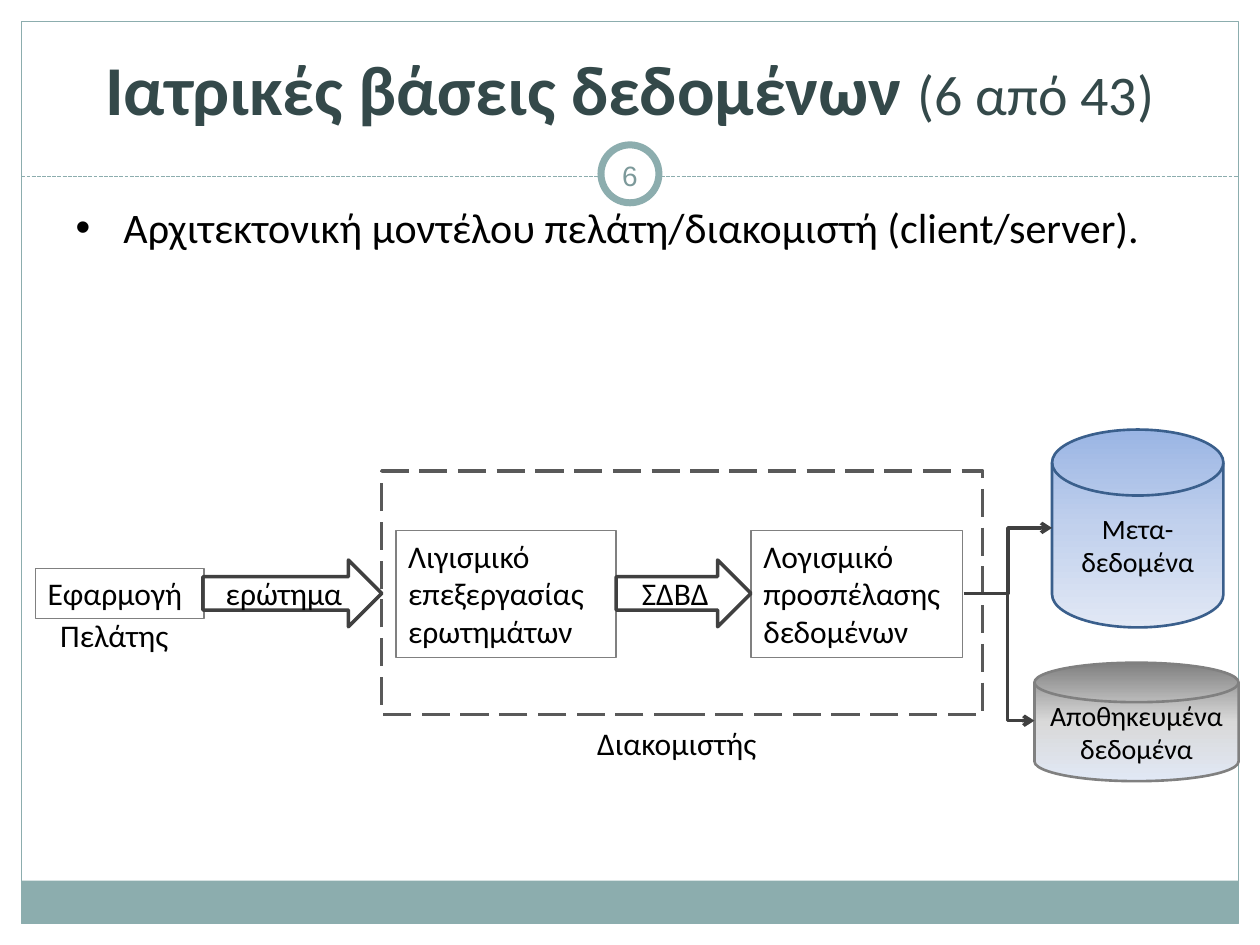
from copy import deepcopy

from lxml import etree
from pptx import Presentation
from pptx.dml.color import RGBColor
from pptx.enum.dml import MSO_LINE
from pptx.enum.shapes import MSO_CONNECTOR, MSO_SHAPE
from pptx.enum.text import MSO_ANCHOR, MSO_AUTO_SIZE, PP_ALIGN
from pptx.oxml.ns import qn
from pptx.util import Inches, Pt

RECT, OVAL = MSO_SHAPE.RECTANGLE, MSO_SHAPE.OVAL
ARROW, DISK = MSO_SHAPE.RIGHT_ARROW, MSO_SHAPE.FLOWCHART_MAGNETIC_DISK
STRAIGHT, ELBOW = MSO_CONNECTOR.STRAIGHT, MSO_CONNECTOR.ELBOW
SYS_DASH, LONG_DASH = MSO_LINE.SQUARE_DOT, MSO_LINE.LONG_DASH
LEFT, CENTER = PP_ALIGN.LEFT, PP_ALIGN.CENTER
TOP, MIDDLE = MSO_ANCHOR.TOP, MSO_ANCHOR.MIDDLE
NO_FIT, GROW = MSO_AUTO_SIZE.NONE, MSO_AUTO_SIZE.SHAPE_TO_FIT_TEXT
TEAL, INK, GREY, BLACK = "8CADAE", "404040", "808080", "000000"


def rgb(value):
    """Turn a hex string into a colour."""
    return RGBColor.from_string(value)


def inches(box):
    """Turn a sequence of numbers into lengths."""
    return [Inches(v) for v in box]


def add_run(p, text, size, color=BLACK, bold=False, font="Calibri"):
    """Append one formatted run to a paragraph."""
    r = p.add_run()
    r.text = text
    r.font.name, r.font.size, r.font.bold = font, Pt(size), bold
    r.font.color.rgb = rgb(color)


def set_line(line, color, width, dash=None):
    """Format an outline or a connector line."""
    line.color.rgb = rgb(color)
    line.width = Pt(width)
    if dash:
        line.dash_style = dash


def set_text(s, text, size=18, align=LEFT, anchor=TOP, wrap=True, fit=NO_FIT):
    """Write one paragraph into a shape."""
    tf = s.text_frame
    tf.word_wrap, tf.auto_size, tf.vertical_anchor = wrap, fit, anchor
    p = tf.paragraphs[0]
    p.alignment = align
    add_run(p, text, size)


def add_box(slide, kind, box, fill=None, line=None):
    """Add a preset shape with an optional fill and line."""
    s = slide.shapes.add_shape(kind, *inches(box))
    s.shadow.inherit = False
    if fill:
        s.fill.solid()
        s.fill.fore_color.rgb = rgb(fill)
    else:
        s.fill.background()
    if line:
        set_line(s.line, *line)
    else:
        s.line.fill.background()
    return s


def add_label(slide, box, text):
    """Add a free caption that does not wrap."""
    s = slide.shapes.add_textbox(*inches(box))
    set_text(s, text, wrap=False, fit=GROW)


def add_link(slide, kind, ends, line, bend=None, arrow=False):
    """Add a connector, with an optional bend position and arrowhead."""
    s = slide.shapes.add_connector(kind, *inches(ends))
    set_line(s.line, *line)
    etree.SubElement(s._element.spPr, qn("a:effectLst"))
    if arrow:
        etree.SubElement(s.line._get_or_add_ln(), qn("a:tailEnd"), type="arrow")
    if bend:
        guides = s._element.spPr.find(qn("a:prstGeom")).get_or_add_avLst()
        etree.SubElement(guides, qn("a:gd"), name="adj1", fmla=f"val {round(bend * 100000)}")


def add_disk(slide, box, text, colors, line_color):
    """Add a data store with a vertical three-stop gradient."""
    s = add_box(slide, DISK, box, line=(line_color, 1.5))
    s.fill.gradient()
    s.fill.gradient_angle = 270
    stops = s._element.spPr.find(qn("a:gradFill")).find(qn("a:gsLst"))
    stops.append(deepcopy(stops[-1]))
    for stop, position, color in zip(s.fill.gradient_stops, (0, 0.5, 1), colors):
        stop.position = position
        stop.color.rgb = rgb(color)
    set_text(s, text, 16, CENTER, MIDDLE)


def add_frame(slide, box, number):
    """Draw the page border, footer band, divider and page number."""
    left, top, width, height = box
    right, middle, divider = left + width, left + width / 2, 1.4
    add_box(slide, RECT, (left, 6.99, width, 0.34), TEAL)
    add_box(slide, RECT, box, line=(TEAL, 0.75))
    add_link(slide, STRAIGHT, (left, divider, right, divider), (TEAL, 0.75, SYS_DASH))
    add_box(slide, OVAL, (middle - 0.23, 1.15, 0.46, 0.46), "FFFFFF", (TEAL, 4))
    s = slide.shapes.add_textbox(*inches((middle - 0.25, 1.15, 0.5, 0.48)))
    tf = s.text_frame
    tf.word_wrap, tf.vertical_anchor = True, MIDDLE
    tf.margin_left = tf.margin_right = tf.margin_top = tf.margin_bottom = Inches(0.05)
    p = tf.paragraphs[0]
    p.alignment = CENTER
    add_run(p, number, 16, "7C999A", font="Arial")


def place(s, box):
    """Move a placeholder to a box and return its first paragraph."""
    s.left, s.top, s.width, s.height = inches(box)
    s.text_frame.word_wrap, s.text_frame.auto_size = True, NO_FIT
    return s.text_frame.paragraphs[0]


def fill_title(s, box):
    """Fill the title placeholder."""
    p = place(s, box)
    s.text_frame.vertical_anchor = MIDDLE
    p.alignment = CENTER
    add_run(p, "Ιατρικές βάσεις δεδομένων ", 40, "34494A", True)
    add_run(p, "(6 από 43)", 32, "34494A")


def fill_body(s, box):
    """Fill the body placeholder with its bullet."""
    p = place(s, box)
    pPr = p._p.get_or_add_pPr()
    pPr.set("marL", str(Inches(0.38)))
    pPr.set("indent", str(-Inches(0.38)))
    etree.SubElement(pPr, qn("a:buFont"), typeface="Arial")
    etree.SubElement(pPr, qn("a:buChar"), char="•")
    p.space_before = Pt(0)
    add_run(p, "Αρχιτεκτονική μοντέλου πελάτη/διακομιστή (client/server).", 24)


def add_diagram(slide, box):
    """Draw the client, the server and the data stores inside a box."""
    x, y = box[:2]

    def at(dx, dy, *size):
        return (x + dx, y + dy, *size)

    add_disk(slide, at(7.93, 1.85, 1.62, 0.94), "Αποθηκευμένα δεδομένα",
             (GREY, "D9D9D9", "E1E8F5"), GREY)
    add_disk(slide, at(8.07, 0, 1.36, 1.57), "Μετα-δεδομένα",
             ("9AB5E4", "C2D1ED", "E1E8F5"), "3A5F8C")
    s = add_box(slide, RECT, at(0, 1.1, 1.34, 0.4), line=(GREY, 0.75))
    set_text(s, "Εφαρμογή", wrap=False, fit=GROW)
    add_label(slide, at(0.1, 1.43, 1.13, 0.4), "Πελάτης")
    for dx, width, text in ((2.86, 1.75, "Λιγισμικό επεξεργασίας ερωτημάτων"),
                            (5.68, 1.68, "Λογισμικό προσπέλασης δεδομένων")):
        s = add_box(slide, RECT, at(dx, 0.8, width, 1.01), line=(GREY, 1))
        set_text(s, text, fit=GROW)
    for dx, width, text in ((1.33, 1.42, "ερώτημα"), (4.61, 1.07, "ΣΔΒΔ")):
        s = add_box(slide, ARROW, at(dx, 1.035, width, 0.53), line=(INK, 2))
        set_text(s, text, 18, CENTER, MIDDLE)
    add_box(slide, RECT, at(2.75, 0.33, 4.77, 1.93), line=("595959", 2, LONG_DASH))
    add_label(slide, at(4.36, 2.29, 1.48, 0.4), "Διακομιστής")
    for end, bend in ((at(8.07, 0.78), 0.5), (at(7.93, 2.31), 0.62)):
        add_link(slide, ELBOW, at(7.37, 1.3) + end, (INK, 2), bend, True)


def main():
    """Build the slide and save it."""
    prs = Presentation()
    prs.slide_width, prs.slide_height = Inches(10), Inches(7.5)
    slide = prs.slides.add_slide(prs.slide_layouts[1])
    add_frame(slide, (0.17, 0.17, 9.66, 7.16), "6")
    fill_title(slide.shapes.title, (0.5, 0.2, 9, 0.99))
    fill_body(slide.placeholders[1], (0.5, 1.55, 9, 1.02))
    add_diagram(slide, (0.28, 3.41, 9.55, 2.79))
    prs.save("out.pptx")


if __name__ == "__main__":
    main()
